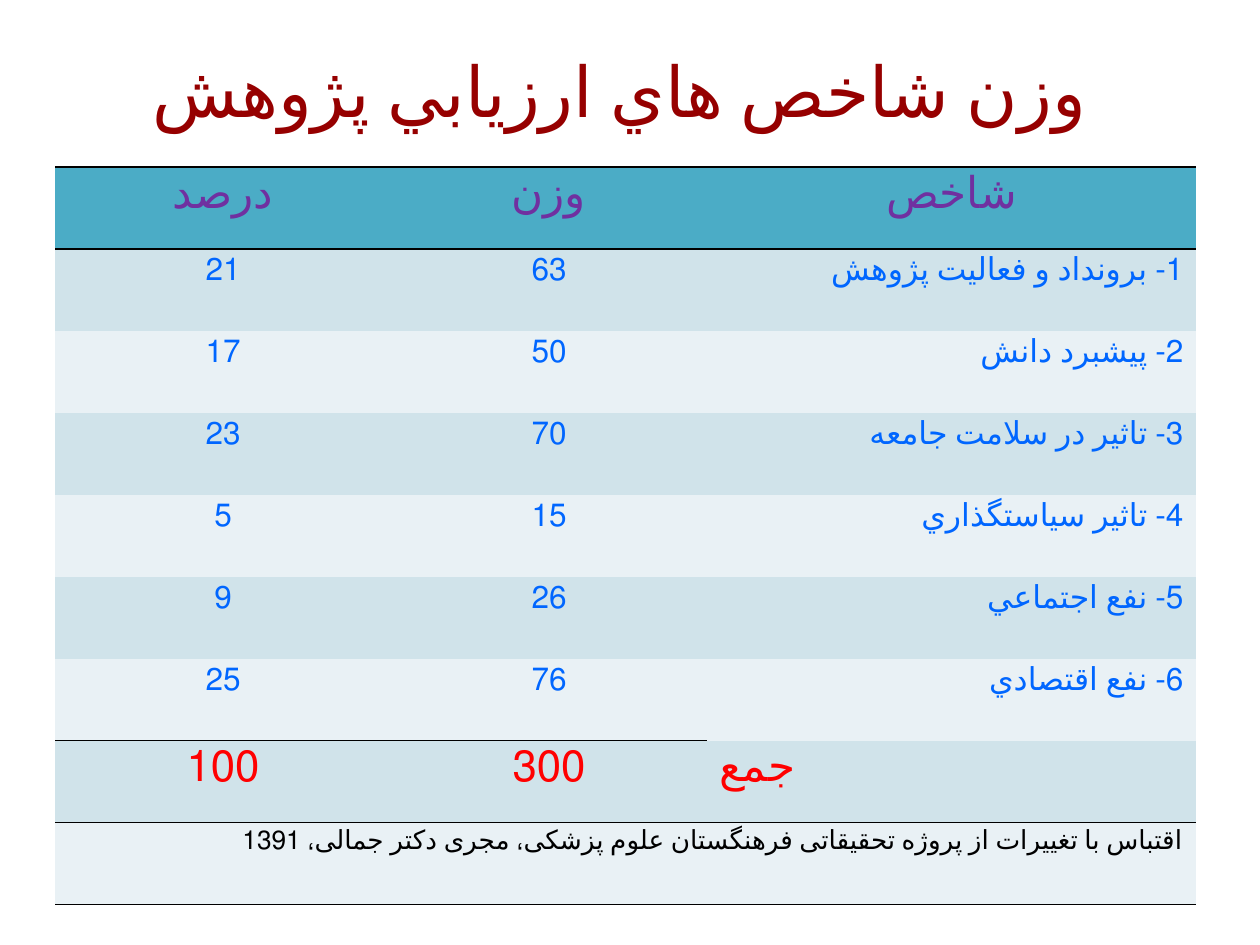
"""Build a slide with a table of research evaluation weights."""
from dataclasses import dataclass
from typing import Optional

import lxml.etree
import pptx
import pptx.dml.color
import pptx.enum.lang
import pptx.enum.text
import pptx.oxml.ns
import pptx.util

RGBColor = pptx.dml.color.RGBColor
ALIGN = pptx.enum.text.PP_ALIGN
PX = 914400 // 126
FONT = "Calibri"
DARK_RED = RGBColor(0x96, 0x00, 0x00)
PURPLE = RGBColor(0x70, 0x30, 0xA0)
BLUE = RGBColor(0x00, 0x66, 0xFF)
RED = RGBColor(0xFF, 0x00, 0x00)
BLACK = RGBColor(0x00, 0x00, 0x00)
TEAL = RGBColor(0x4B, 0xAC, 0xC6)
BANDS = (RGBColor(0xE9, 0xF1, 0xF5), RGBColor(0xD0, 0xE3, 0xEA))
PLAIN_TABLE_STYLE = "{2D5ABB26-0587-4C30-8999-92F81FD0307C}"
COLUMN_WIDTHS = (336, 316, 489)
ROW_HEIGHT = 82


@dataclass(frozen=True)
class TableRow:
    texts: tuple[str, ...]
    size: int = 18
    color: RGBColor = BLUE
    last_align: Optional[ALIGN] = ALIGN.RIGHT
    lines_above: int = 0
    lines_below: int = 0


ROWS = (
    TableRow(("درصد", "وزن", "شاخص"), 25, PURPLE, ALIGN.CENTER, 3, 3),
    TableRow(("21", "63", "1- برونداد و فعاليت پژوهش")),
    TableRow(("17", "50", "2- پيشبرد دانش")),
    TableRow(("23", "70", "3- تاثير در سلامت جامعه")),
    TableRow(("5", "15", "4- تاثير سياستگذاري")),
    TableRow(("9", "26", "5- نفع اجتماعي")),
    TableRow(("25", "76", "6- نفع اقتصادي"), lines_below=2),
    TableRow(("100", "300", "جمع"), 25, RED, None, 2, 2),
    TableRow(
        ("اقتباس با تغييرات از پروژه تحقيقاتی فرهنگستان علوم پزشکی، مجری دکتر جمالی، 1391",),
        15, BLACK, ALIGN.RIGHT, 3, 3,
    ),
)


def write_text(text_frame, text: str, *, size: int, color: RGBColor, align: Optional[ALIGN]) -> None:
    paragraph = text_frame.paragraphs[0]
    paragraph.alignment = align
    paragraph._p.get_or_add_pPr().set("rtl", "1")
    run = paragraph.add_run()
    run.text = text
    run.font.name = FONT
    run.font.size = pptx.util.Pt(size)
    run.font.color.rgb = color
    run._r.get_or_add_rPr().set("lang", "fa-IR")


def add_border(cell, side: str) -> None:
    qn = pptx.oxml.ns.qn
    properties = cell._tc.get_or_add_tcPr()
    line = lxml.etree.SubElement(properties, qn(f"a:{side}"), w=str(pptx.util.Pt(1)))
    fill = lxml.etree.SubElement(line, qn("a:solidFill"))
    lxml.etree.SubElement(fill, qn("a:srgbClr"), val=str(BLACK))


def fill_row(table, index: int, row: TableRow) -> None:
    table.rows[index].height = ROW_HEIGHT * PX
    for column in range(len(COLUMN_WIDTHS)):
        cell = table.cell(index, column)
        if column < row.lines_above:
            add_border(cell, "lnT")
        if column < row.lines_below:
            add_border(cell, "lnB")
        cell.fill.solid()
        cell.fill.fore_color.rgb = BANDS[index % 2] if index else TEAL
    for column, text in enumerate(row.texts):
        align = row.last_align if column == len(row.texts) - 1 else ALIGN.CENTER
        write_text(table.cell(index, column).text_frame, text,
                   size=row.size, color=row.color, align=align)
    if len(row.texts) == 1:
        table.cell(index, 0).merge(table.cell(index, len(COLUMN_WIDTHS) - 1))


def add_weights_table(slide) -> None:
    frame = slide.shapes.add_table(
        len(ROWS), len(COLUMN_WIDTHS), 55 * PX, 167 * PX,
        sum(COLUMN_WIDTHS) * PX, len(ROWS) * ROW_HEIGHT * PX,
    )
    table = frame.table
    table.first_row = table.horz_banding = False
    table._tbl.tblPr.find(pptx.oxml.ns.qn("a:tableStyleId")).text = PLAIN_TABLE_STYLE
    for column, width in zip(table.columns, COLUMN_WIDTHS):
        column.width = width * PX
    for index, row in enumerate(ROWS):
        fill_row(table, index, row)


def add_title(slide, text: str) -> None:
    title = slide.shapes.title
    title.left, title.top, title.width, title.height = (
        length * PX for length in (84, 10, 1071, 158))
    title.text_frame.vertical_anchor = pptx.enum.text.MSO_ANCHOR.MIDDLE
    write_text(title.text_frame, text, size=40, color=DARK_RED, align=ALIGN.CENTER)


def main() -> None:
    presentation = pptx.Presentation()
    presentation.slide_width = 1260 * PX
    presentation.slide_height = 945 * PX
    slide = presentation.slides.add_slide(presentation.slide_layouts[5])
    add_title(slide, "وزن شاخص هاي ارزيابي پژوهش")
    add_weights_table(slide)
    presentation.save("out.pptx")


if __name__ == "__main__":
    main()
